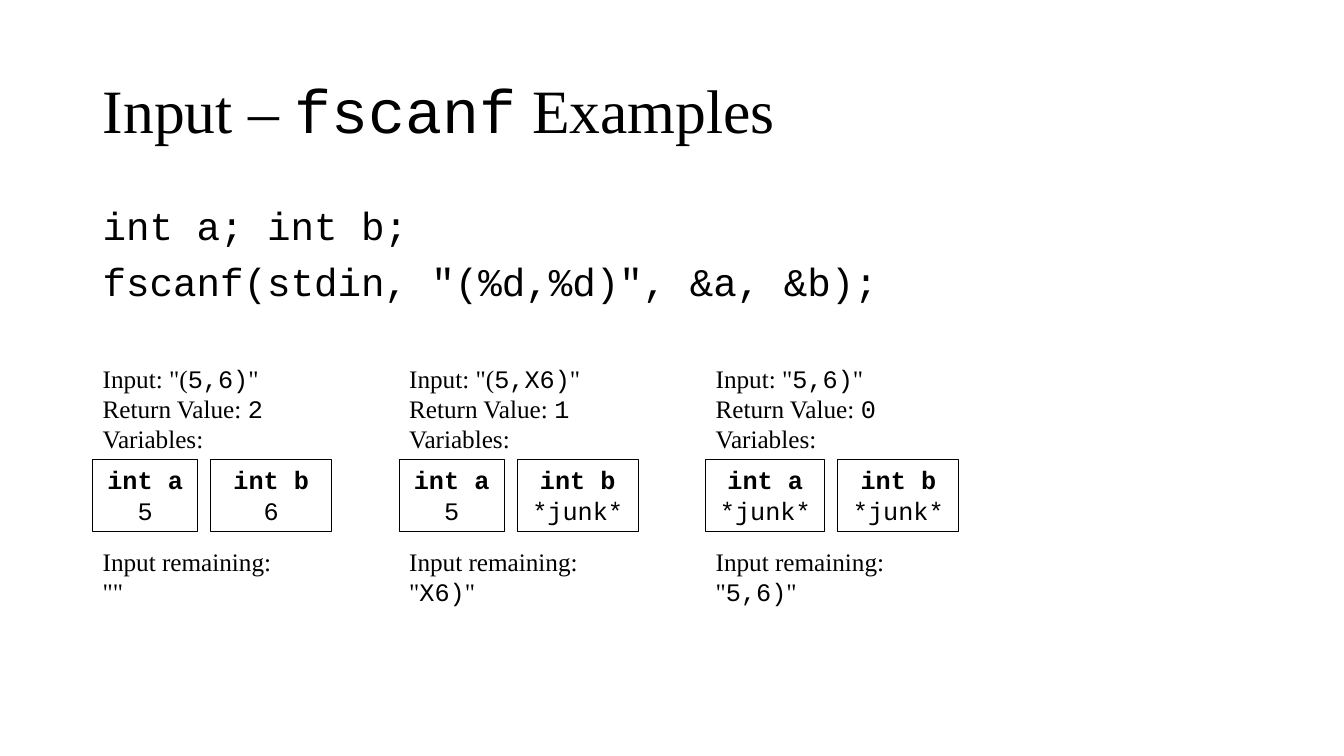
import dataclasses
import typing

import pptx
import pptx.dml.color
import pptx.enum.shapes
import pptx.enum.text
import pptx.util

Inches = pptx.util.Inches
Pt = pptx.util.Pt
ALIGN = pptx.enum.text.PP_ALIGN
ANCHOR = pptx.enum.text.MSO_ANCHOR
AUTO = pptx.enum.text.MSO_AUTO_SIZE


@dataclasses.dataclass(frozen=True)
class Theme:
    ink: pptx.dml.color.RGBColor = pptx.dml.color.RGBColor(0, 0, 0)
    serif: str = "Times New Roman"
    mono: str = "Courier New"
    title: int = 44
    code: int = 28
    text: int = 18


THEME = Theme()


@dataclasses.dataclass(frozen=True)
class Span:
    text: str
    font: str = THEME.serif
    bold: bool = False


@dataclasses.dataclass(frozen=True)
class Line:
    spans: typing.Sequence[Span]
    format: typing.Mapping[str, typing.Any] = dataclasses.field(default_factory=dict)


@dataclasses.dataclass(frozen=True)
class Case:
    given: typing.Sequence[Span]
    count: str
    a: str
    b: str
    remaining: typing.Sequence[Span]
    a_width: float


def code(text: str, bold: bool = False) -> Span:
    return Span(text, THEME.mono, bold)


def apply(target: typing.Any, values: typing.Mapping[str, typing.Any]) -> None:
    for name, value in values.items():
        setattr(target, name, value)


def write(tf: typing.Any, lines: typing.Sequence[Line], size: int,
          frame: typing.Mapping[str, typing.Any]) -> None:
    apply(tf, {"word_wrap": True, **frame})
    for i, line in enumerate(lines):
        p = tf.paragraphs[0] if i == 0 else tf.add_paragraph()
        apply(p, line.format)
        for span in line.spans:
            r = p.add_run()
            r.text = span.text
            apply(r.font, {"name": span.font, "size": Pt(size), "bold": span.bold})
            r.font.color.rgb = THEME.ink


def add_text(s: typing.Any, left: float, top: float, width: float, height: float,
             lines: typing.Sequence[Line], size: int, auto: typing.Any) -> None:
    sp = s.shapes.add_textbox(Inches(left), Inches(top), Inches(width), Inches(height))
    write(sp.text_frame, lines, size, {"auto_size": auto})


def add_variable(s: typing.Any, left: float, width: float, name: str, value: str) -> None:
    sp = s.shapes.add_shape(pptx.enum.shapes.MSO_SHAPE.RECTANGLE, Inches(left),
                            Inches(4.56), Inches(width), Inches(0.71))
    sp.shadow.inherit = False
    sp.fill.background()
    sp.line.color.rgb = THEME.ink
    sp.line.width = Pt(0.75)
    centred = {"alignment": ALIGN.CENTER}
    lines = [Line([code(f"int {name}", True)], centred), Line([code(value)], centred)]
    write(sp.text_frame, lines, THEME.text,
          {"auto_size": AUTO.SHAPE_TO_FIT_TEXT, "vertical_anchor": ANCHOR.TOP})


def add_case(s: typing.Any, left: float, case: Case) -> None:
    lines = [
        Line(case.given),
        Line([Span("Return Value: "), code(case.count)]),
        Line([Span("Variables:")]),
        Line([Span("Input remaining:")], {"space_before": Pt(66)}),
        Line(case.remaining),
    ]
    add_text(s, left, 3.55, 2.37, 2.52, lines, THEME.text, AUTO.SHAPE_TO_FIT_TEXT)
    add_variable(s, left, case.a_width, "a", case.a)
    add_variable(s, left + case.a_width + 0.13, 1.2, "b", case.b)


MARGIN = 0.92
CASE_PITCH = 3.04
QUOTE = Span('"')
CASES = [
    Case([Span('Input: "('), code("5,6)"), QUOTE], "2", "5", "6", [Span('""')], 1.04),
    Case([Span('Input: "('), code("5,X6)"), QUOTE], "1", "5", "*junk*",
         [QUOTE, code("X6)"), QUOTE], 1.04),
    Case([Span('Input: "'), code("5,6)"), QUOTE], "0", "*junk*", "*junk*",
         [QUOTE, code("5,6)"), QUOTE], 1.18),
]


def main() -> None:
    prs = pptx.Presentation()
    apply(prs, {"slide_width": Inches(13.33), "slide_height": Inches(7.5)})
    s = prs.slides.add_slide(prs.slide_layouts[5])

    title = s.shapes.title
    apply(title, {"left": Inches(MARGIN), "top": Inches(0.4),
                  "width": Inches(11.5), "height": Inches(1.45)})
    heading = Line([Span("Input – "), code("fscanf"), Span(" Examples")],
                   {"alignment": ALIGN.LEFT, "line_spacing": 0.9})
    write(title.text_frame, [heading], THEME.title,
          {"auto_size": AUTO.NONE, "vertical_anchor": ANCHOR.MIDDLE})

    spacing = {"line_spacing": 0.9, "space_before": Pt(10)}
    statements = ["int a; int b;", 'fscanf(stdin, "(%d,%d)", &a, &b);']
    add_text(s, MARGIN, 2, 11.5, 1.19,
             [Line([code(text)], spacing) for text in statements], THEME.code, AUTO.NONE)

    for i, case in enumerate(CASES):
        add_case(s, MARGIN + i * CASE_PITCH, case)

    prs.save("out.pptx")


if __name__ == "__main__":
    main()
